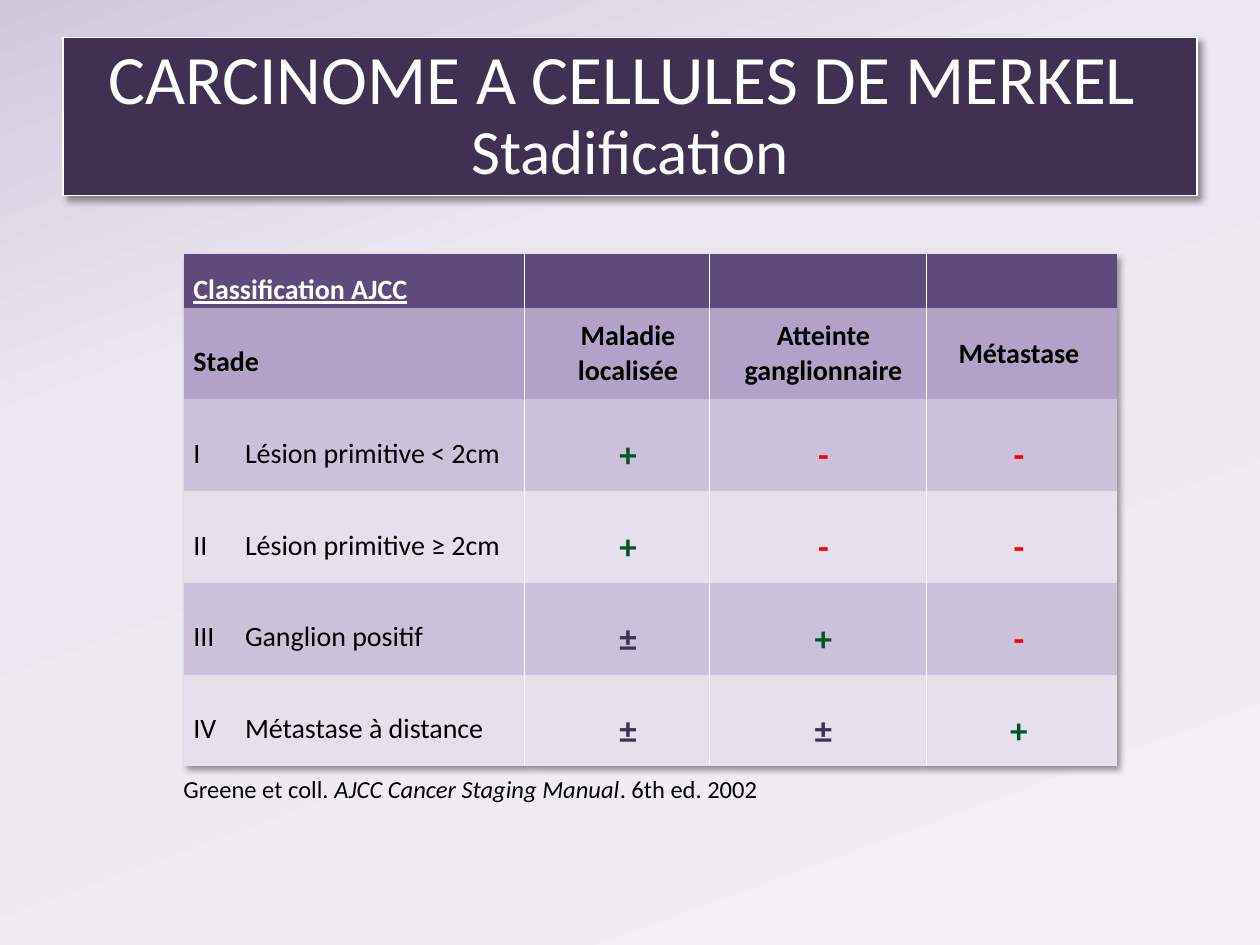
from copy import deepcopy

from lxml import etree
from pptx import Presentation
from pptx.dml.color import RGBColor
from pptx.enum import shapes, text
from pptx.oxml import parse_xml
from pptx.oxml.ns import nsdecls, qn
from pptx.util import Cm, Pt

FONT = "Calibri"
COLORS = {
    "white": "FFFFFF", "black": "000000", "plum": "403152",
    "top": "604A7B", "head": "B3A2C7", "odd": "CCC1DA", "even": "E6E0EC",
    "green": "005426", "red": "FF0000",
}
GRADIENT = [(0, "D2C8DE"), (0.31, "ECE7F1"), (1, "F2EFF5")]
TITLE = [("CARCINOME A CELLULES DE MERKEL ", 39.6), ("Stadification", 36)]
CAPTION = "Classification AJCC"
HEADERS = ["Stade", "", "Maladie localisée", "Atteinte ganglionnaire", "Métastase"]
STAGES = [
    ("I", "Lésion primitive < 2cm", "+", "-", "-"),
    ("II", "Lésion primitive ≥ 2cm", "+", "-", "-"),
    ("III", "Ganglion positif", "±", "+", "-"),
    ("IV", "Métastase à distance", "±", "±", "+"),
]
SIGN_COLORS = {"+": "green", "-": "red", "±": "plum"}
SOURCE = [("Greene et coll. ", False), ("AJCC Cancer Staging Manual", True),
          (". 6th ed. 2002", False)]
COL_WIDTHS = [1.04, 5.94, 3.94, 3.94, 3.94]
ROW_HEIGHTS = [1.07] + [1.85] * 5
DIVIDERS = [10.57, 14.3, 18.67]
NO_STYLE = "{2D5ABB26-0587-4C30-8999-92F81FD0307C}"
ALIGN = text.PP_ALIGN


def rgb(name):
    return RGBColor.from_string(COLORS[name])


def add_run(p, words, size, color, bold=False, italic=False, underline=False):
    r = p.add_run()
    r.text = words
    f = r.font
    f.name, f.size, f.color.rgb = FONT, Pt(size), rgb(color)
    f.bold, f.italic, f.underline = bold, italic, underline


def drop_shadow():
    return parse_xml(
        f'<a:effectLst {nsdecls("a")}><a:outerShdw blurRad="50800" dist="38100" '
        'dir="2700000" algn="tl" rotWithShape="0"><a:srgbClr val="000000">'
        '<a:alpha val="40000"/></a:srgbClr></a:outerShdw></a:effectLst>')


def add_background(slide, width, height):
    sp = slide.shapes.add_shape(shapes.MSO_SHAPE.RECTANGLE, 0, 0, width, height)
    sp.shadow.inherit = False
    sp.line.fill.background()
    sp.fill.gradient()
    sp.fill.gradient_angle = 290
    stops = sp._element.spPr.find(qn("a:gradFill")).find(qn("a:gsLst"))
    stops.append(deepcopy(stops[-1]))
    for stop, (position, color) in zip(sp.fill.gradient_stops, GRADIENT):
        stop.position = position
        stop.color.rgb = RGBColor.from_string(color)


def add_title(slide):
    sp = slide.shapes.add_shape(shapes.MSO_SHAPE.RECTANGLE,
                                Cm(1.27), Cm(0.76), Cm(22.86), Cm(3.18))
    sp.fill.solid()
    sp.fill.fore_color.rgb = rgb("plum")
    sp.line.color.rgb = rgb("white")
    sp.line.width = Pt(0.75)
    sp._element.spPr.append(drop_shadow())
    tf = sp.text_frame
    tf.word_wrap = True
    tf.vertical_anchor = text.MSO_ANCHOR.MIDDLE
    p = tf.paragraphs[0]
    p.alignment, p.line_spacing = ALIGN.CENTER, 0.9
    for i, (words, size) in enumerate(TITLE):
        if i:
            p.add_line_break()
        add_run(p, words, size, "white")


def fill_cell(cell, fill, words, align, spacing=1.5, size=16, color="black", **style):
    cell.fill.solid()
    cell.fill.fore_color.rgb = rgb(fill)
    cell.vertical_anchor = text.MSO_ANCHOR.MIDDLE
    cell.margin_left = cell.margin_right = Cm(0.19)
    cell.margin_top = cell.margin_bottom = 0
    p = cell.text_frame.paragraphs[0]
    p.alignment, p.line_spacing, p.space_after = align, spacing, Pt(10)
    if words:
        add_run(p, words, size, color, **style)


def add_stage_table(slide):
    frame = slide.shapes.add_table(len(ROW_HEIGHTS), len(COL_WIDTHS), Cm(3.71), Cm(5.13),
                                   Cm(sum(COL_WIDTHS)), Cm(sum(ROW_HEIGHTS)))
    table = frame.table
    props = table._tbl.tblPr
    props.find(qn("a:tableStyleId")).text = NO_STYLE
    props.insert(0, drop_shadow())
    for column, width in zip(table.columns, COL_WIDTHS):
        column.width = Cm(width)
    for row, height in zip(table.rows, ROW_HEIGHTS):
        row.height = Cm(height)

    for c, header in enumerate(HEADERS):
        fill_cell(table.cell(0, c), "top", "" if c else CAPTION, ALIGN.JUSTIFY,
                  color="white", bold=True, underline=True)
        align, spacing = (ALIGN.CENTER, 1.0) if c > 1 else (ALIGN.JUSTIFY, 1.5)
        fill_cell(table.cell(1, c), "head", header, align, spacing, bold=True)
    for r, stage in enumerate(STAGES, 2):
        fill = "even" if r % 2 else "odd"
        for c, words in enumerate(stage):
            if words in SIGN_COLORS:
                fill_cell(table.cell(r, c), fill, words, ALIGN.CENTER, size=20,
                          color=SIGN_COLORS[words], bold=True)
            else:
                fill_cell(table.cell(r, c), fill, words, ALIGN.JUSTIFY)
    for r, first, last in [(0, 0, 2), (0, 3, 4), (1, 0, 1)]:
        table.cell(r, first).merge(table.cell(r, last))


def add_source(slide):
    tf = slide.shapes.add_textbox(Cm(1.9), Cm(15.47), Cm(19), Cm(0.86)).text_frame
    tf.word_wrap = True
    p = tf.paragraphs[0]
    p._p.get_or_add_pPr().set("marL", str(Cm(1.55)))
    for words, italic in SOURCE:
        add_run(p, words, 14, "black", italic=italic)


def add_dividers(slide):
    for x in DIVIDERS:
        line = slide.shapes.add_connector(shapes.MSO_CONNECTOR.STRAIGHT,
                                          Cm(x), Cm(5.11), Cm(x), Cm(15.42))
        line.line.color.rgb = rgb("white")
        line.line.width = Pt(0.75)
        etree.SubElement(line._element.spPr, qn("a:effectLst"))


def main():
    prs = Presentation()
    prs.slide_width, prs.slide_height = Cm(25.4), Cm(19.05)
    slide = prs.slides.add_slide(prs.slide_layouts[6])
    add_background(slide, prs.slide_width, prs.slide_height)
    add_title(slide)
    add_stage_table(slide)
    add_source(slide)
    add_dividers(slide)
    prs.save("out.pptx")


if __name__ == "__main__":
    main()
